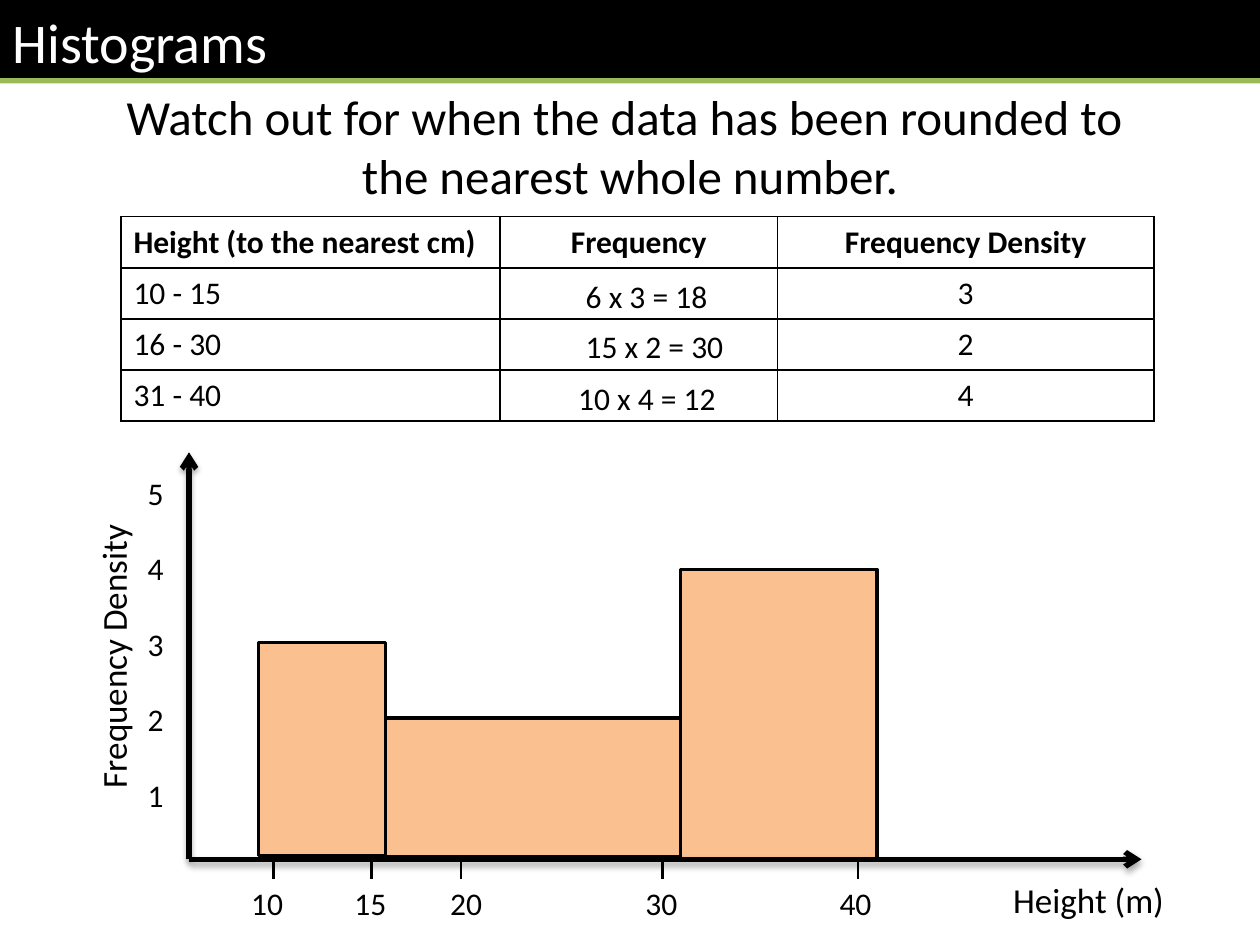
from lxml import etree
from pptx import Presentation
from pptx.dml.color import RGBColor
from pptx.enum import shapes as shp, text as txt
from pptx.oxml import ns
from pptx.util import Inches, Pt

HUES = {"ink": "000000", "paper": "FFFFFF", "bar": "FAC090", "rule": "9BBB59"}
COLOR = {name: RGBColor.from_string(code) for name, code in HUES.items()}
LEFT, MID = txt.PP_ALIGN.LEFT, txt.PP_ALIGN.CENTER

deck = Presentation()
deck.slide_width, deck.slide_height = Inches(10), Inches(7.5)
slide = deck.slides.add_slide(deck.slide_layouts[6])
items = slide.shapes


def write(frame, words, size=18, align=LEFT, hue="ink", bold=False):
    frame.text = words
    for para in frame.paragraphs:
        para.alignment = align
        for run in para.runs:
            font = run.font
            font.name, font.size, font.bold = "Calibri", Pt(size), bold
            font.color.rgb = COLOR[hue]


def draw(x1, y1, x2, y2, width, hue="ink", axis=False):
    """Draw a line; an axis also gets an arrowhead and a soft shadow."""
    line = items.add_connector(shp.MSO_CONNECTOR.STRAIGHT,
                               Inches(x1), Inches(y1), Inches(x2), Inches(y2))
    line.line.width = Pt(width)
    line.line.color.rgb = COLOR[hue]
    props = line._element.spPr
    effects = etree.SubElement(props, ns.qn("a:effectLst"))
    if axis:
        etree.SubElement(props.find(ns.qn("a:ln")), ns.qn("a:tailEnd"), type="arrow")
        shade = etree.SubElement(effects, ns.qn("a:outerShdw"), blurRad=str(Pt(3.1)),
                                 dist=str(Pt(1.8)), dir="5400000", rotWithShape="0")
        tint = etree.SubElement(shade, ns.qn("a:srgbClr"), val=HUES["ink"])
        etree.SubElement(tint, ns.qn("a:alpha"), val="35000")


# Frequency table
rows = [
    ("Height (to the nearest cm)", "Frequency", "Frequency Density"),
    ("10 - 15", "", "3"),
    ("16 - 30", "", "2"),
    ("31 - 40", "", "4"),
]
widths = [3.01, 2.2, 2.99]
grid = items.add_table(len(rows), len(widths), Inches(0.96), Inches(1.72),
                       Inches(sum(widths)), Inches(1.62)).table
grid.first_row = grid.horz_banding = False
for col, width in zip(grid.columns, widths):
    col.width = Inches(width)
for r, row in enumerate(rows):
    grid.rows[r].height = Inches(0.405)
    for c, words in enumerate(row):
        cell = grid.cell(r, c)
        write(cell.text_frame, words, align=MID if c else LEFT, bold=r == 0)
        props = cell._tc.get_or_add_tcPr()
        for side in ("lnL", "lnR", "lnT", "lnB"):
            edge = etree.SubElement(props, ns.qn(f"a:{side}"), w=str(Pt(1)))
            fill = etree.SubElement(edge, ns.qn("a:solidFill"))
            etree.SubElement(fill, ns.qn("a:srgbClr"), val=HUES["ink"])
        cell.fill.background()

# Histogram bars: left, top, width, height
bars = [(3.06, 5.7, 2.34, 1.1), (2.05, 5.1, 1.01, 1.69), (5.4, 4.52, 1.56, 2.3)]
for spot in bars:
    bar = items.add_shape(shp.MSO_SHAPE.RECTANGLE, *map(Inches, spot))
    bar.shadow.inherit = False
    bar.fill.solid()
    bar.fill.fore_color.rgb = COLOR["bar"]
    bar.line.color.rgb = COLOR["ink"]
    bar.line.width = Pt(2)

# Axes and ticks
base = 6.82
draw(1.5, base, 1.5, 3.59, 3, axis=True)
draw(1.5, base, 9.06, base, 3, axis=True)
ticks = {"10": (2.17, 2.12), "15": (2.95, 2.94), "20": (3.66, 3.7),
         "30": (5.26, 5.25), "40": (6.81, 6.79)}
for tick, _ in ticks.values():
    draw(tick, base, tick, 6.98, 1.5)

# Title band
band = items.add_shape(shp.MSO_SHAPE.RECTANGLE, 0, 0, Inches(10), Inches(0.66))
band.shadow.inherit = False
band.fill.solid()
band.fill.fore_color.rgb = COLOR["ink"]
band.line.fill.background()
write(band.text_frame, "Histograms", 32, hue="paper")
draw(0, 0.64, 10, 0.64, 3, "rule")

# Text: words, left, top, width, height, size, alignment, rotation
advice = "Watch out for when the data has been rounded to \nthe nearest whole number."
notes = [
    (advice, 0, 0.64, 10, 1.04, 28, MID, 0),
    ("Height (m)", 7.87, 6.92, 1.54, 0.44, 20, MID, 0),
    ("Frequency Density", -0.36, 4.99, 2.52, 0.44, 20, MID, 270),
    ("6 x 3 = 18", 4.55, 2.15, 1.29, 0.4, 18, LEFT, 0),
    ("15 x 2 = 30", 4.55, 2.55, 1.39, 0.4, 18, LEFT, 0),
    ("10 x 4 = 12", 4.49, 2.96, 1.58, 0.4, 18, LEFT, 0),
]
notes += [(words, mid - 0.3, 6.97, 0.6, 0.4, 18, MID, 0)
          for words, (_, mid) in ticks.items()]
notes += [(str(n), 0.96, 3.71 + 0.6 * (5 - n), 0.55, 0.4, 18, MID, 0)
          for n in range(5, 0, -1)]
for words, left, top, width, height, size, align, turn in notes:
    box = items.add_textbox(Inches(left), Inches(top), Inches(width), Inches(height))
    box.rotation = turn
    box.text_frame.word_wrap = True
    write(box.text_frame, words, size, align)

deck.save("out.pptx")
